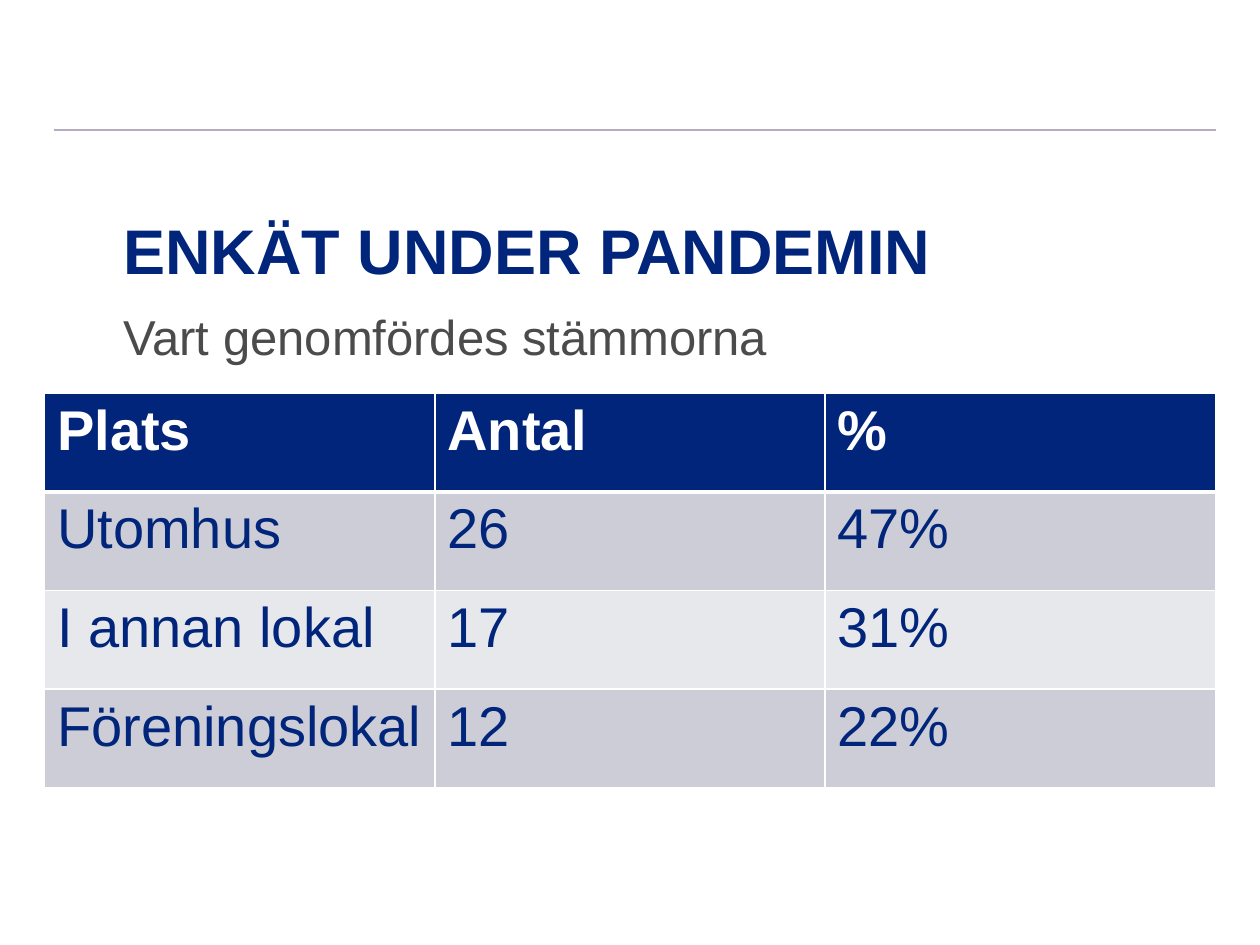
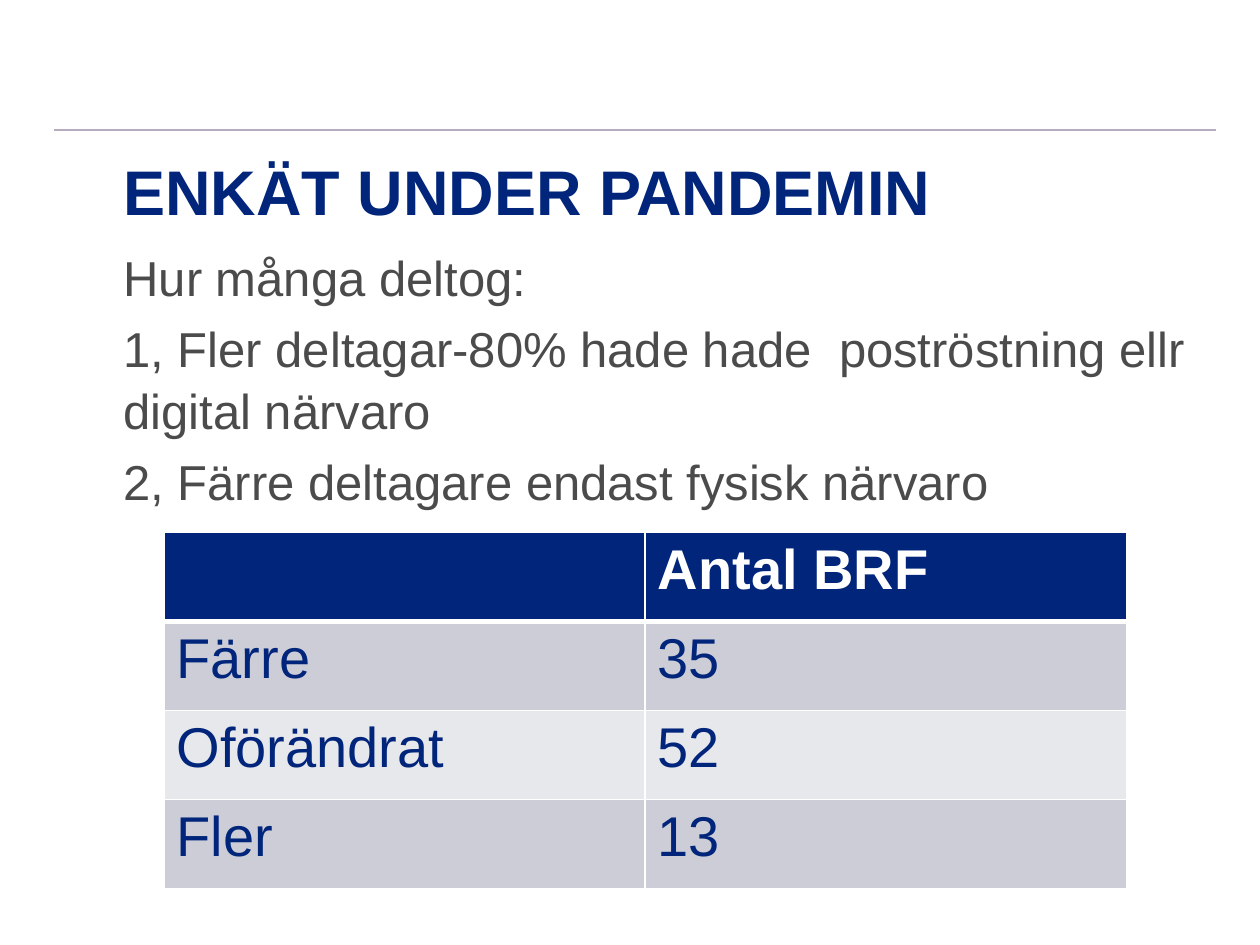
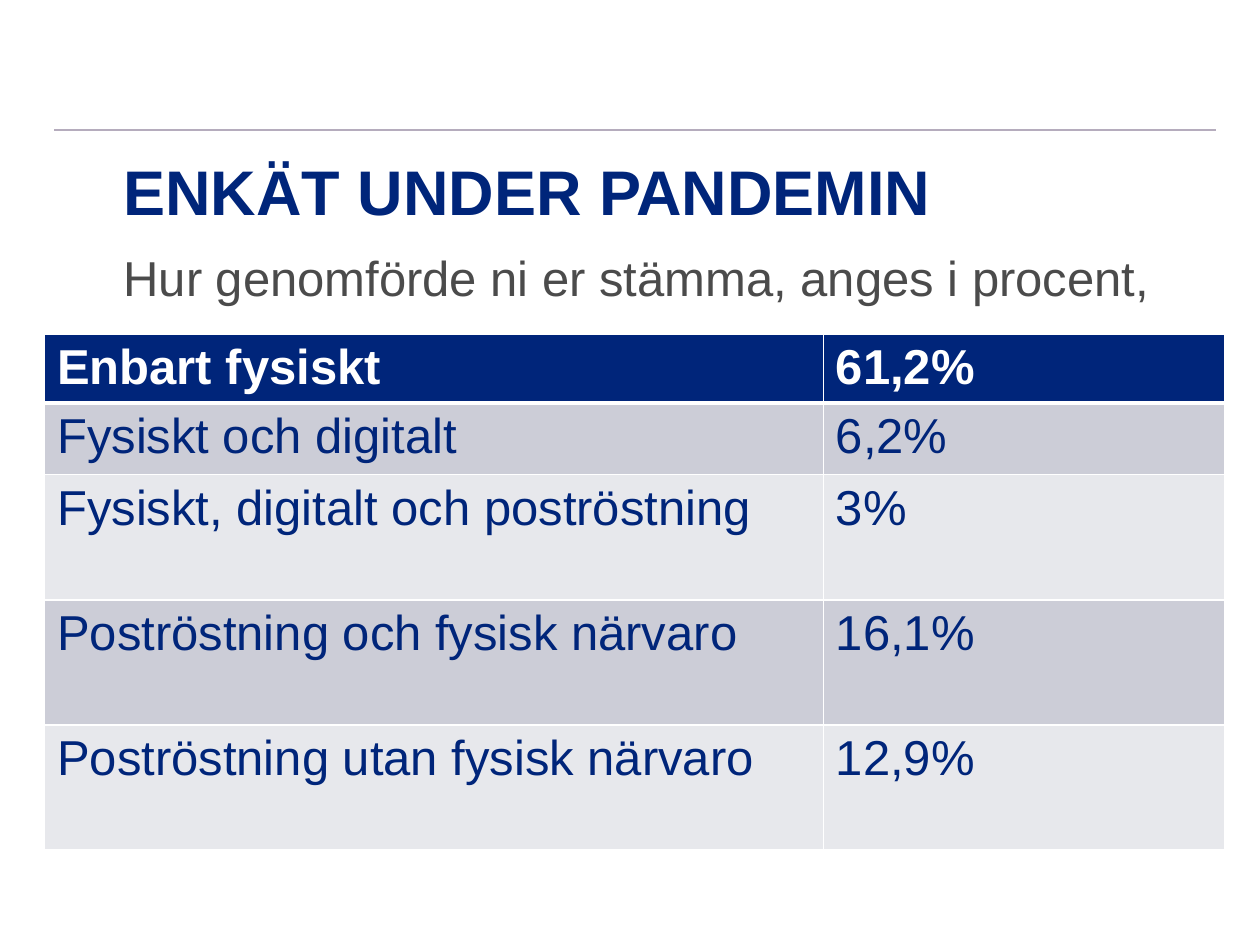
from dataclasses import dataclass

from pptx import Presentation
from pptx.dml.color import RGBColor
from pptx.enum.shapes import MSO_CONNECTOR as Connector
from pptx.enum.text import MSO_ANCHOR as Anchor, MSO_AUTO_SIZE as AutoSize, PP_ALIGN as Align
from pptx.oxml import parse_xml
from pptx.oxml.ns import nsdecls
from pptx.oxml.xmlchemy import OxmlElement
from pptx.util import Pt


@dataclass(frozen=True)
class Theme:
    font: str = "Arial"
    navy: str = "00257A"
    grey: str = "4B4B4B"
    white: str = "FFFFFF"
    rule: str = "B5ACBD"
    bands: tuple = ("CCCDD7", "E7E8EC")
    title_size: float = 36
    body_size: float = 28
    large_table_size: float = 32
    thin: float = 1
    thick: float = 3


THEME = Theme()
SLIDE_SIZE = (720, 540)
LEFT, RIGHT = 63.36, 694.8
RULE_LEFT, RULE_Y = 31, 74.2
TITLE_TOP, BODY_BOTTOM = 77, 507.6
HEADING = "ENKÄT UNDER PANDEMIN"


def place(shape, box):
    shape.left, shape.top, shape.width, shape.height = map(Pt, box)


def format_runs(paragraph, size, color, bold=False):
    for run in paragraph.runs:
        run.font.name = THEME.font
        run.font.size = Pt(size)
        run.font.bold = bold
        run.font.color.rgb = RGBColor.from_string(color)


def add_rule_to_layout(slide):
    """Draw the header rule once and hand it to the shared layout."""
    rule = slide.shapes.add_connector(
        Connector.STRAIGHT, Pt(RULE_LEFT), Pt(RULE_Y), Pt(RIGHT), Pt(RULE_Y))
    rule.line.color.rgb = RGBColor.from_string(THEME.rule)
    rule.line.width = Pt(1.5)
    rule.element.spPr.append(OxmlElement("a:effectLst"))
    slide.slide_layout.shapes.element.append(rule.element)


def fill_title(title, box):
    place(title, box)
    frame = title.text_frame
    frame.text = HEADING
    frame.auto_size = AutoSize.NONE
    frame.vertical_anchor = Anchor.BOTTOM
    heading = frame.paragraphs[0]
    heading.alignment = Align.LEFT
    format_runs(heading, THEME.title_size, THEME.navy, bold=True)


def fill_body(body, box, lines):
    place(body, box)
    frame = body.text_frame
    frame.text = "\n".join(lines)
    frame.auto_size = AutoSize.NONE
    frame.margin_top = Pt(6)
    for index, paragraph in enumerate(frame.paragraphs):
        properties = paragraph._p.get_or_add_pPr()
        properties.set("marL", "0")
        properties.set("indent", "0")
        properties.append(OxmlElement("a:buNone"))
        paragraph.line_spacing = 1.04
        paragraph.space_before = Pt(6 if index else 0)
        format_runs(paragraph, THEME.body_size, THEME.grey)


def set_borders(cell, top, bottom):
    widths = {"L": THEME.thin, "R": THEME.thin, "T": top, "B": bottom}
    properties = cell._tc.get_or_add_tcPr()
    for index, (side, width) in enumerate(widths.items()):
        properties.insert(index, parse_xml(
            f'<a:ln{side} {nsdecls("a")} w="{Pt(width)}"><a:solidFill>'
            f'<a:srgbClr val="{THEME.white}"/></a:solidFill></a:ln{side}>'))


def add_survey_table(slide, origin, widths, heights, answers, size):
    box = (*origin, sum(widths), sum(heights))
    table = slide.shapes.add_table(len(heights), len(widths), *map(Pt, box)).table
    table.horz_banding = False
    for column, width in zip(table.columns, widths):
        column.width = Pt(width)
    for index, (row, height, values) in enumerate(zip(table.rows, heights, answers)):
        row.height = Pt(height)
        header = index == 0
        fill = THEME.navy if header else THEME.bands[(index - 1) % 2]
        for cell, value in zip(row.cells, values):
            cell.text = value
            cell.fill.solid()
            cell.fill.fore_color.rgb = RGBColor.from_string(fill)
            format_runs(cell.text_frame.paragraphs[0], size,
                        THEME.white if header else THEME.navy, bold=header)
            set_borders(cell, top=THEME.thick if index == 1 else THEME.thin,
                        bottom=THEME.thick if header else THEME.thin)


def add_survey_slide(deck, body_top, lines, **table):
    slide = deck.slides.add_slide(deck.slide_layouts[1])
    title, body = slide.placeholders
    width = RIGHT - LEFT
    fill_title(title, (LEFT, TITLE_TOP, width, body_top - TITLE_TOP))
    fill_body(body, (LEFT, body_top, width, BODY_BOTTOM - body_top), lines)
    add_survey_table(slide, **table)
    return slide


def main():
    deck = Presentation()
    deck.slide_width, deck.slide_height = map(Pt, SLIDE_SIZE)

    # Where the meetings were held
    venues = add_survey_slide(
        deck, 167.8, ["Vart genomfördes stämmorna"],
        origin=(25.5, 224.8), widths=[223] * 3, heights=[56.3] * 4,
        size=THEME.large_table_size,
        answers=[("Plats", "Antal", "%"),
                 ("Utomhus", "26", "47%"),
                 ("I annan lokal", "17", "31%"),
                 ("Föreningslokal", "12", "22%")])
    add_rule_to_layout(venues)

    # How many took part
    add_survey_slide(
        deck, 133.9,
        ["Hur många deltog:",
         "1, Fler deltagar-80% hade hade  poströstning ellr digital närvaro",
         "2, Färre deltagare endast fysisk närvaro"],
        origin=(93.7, 304.2), widths=[275] * 2, heights=[50.9] * 4,
        size=THEME.large_table_size,
        answers=[("", "Antal BRF"),
                 ("Färre", "35"),
                 ("Oförändrat", "52"),
                 ("Fler", "13")])

    # How the meetings were held
    add_survey_slide(
        deck, 133.9, ["Hur genomförde ni er stämma, anges i procent,"],
        origin=(25.5, 190.8), widths=[445, 229.6], heights=[39.5, 41] + [71.5] * 3,
        size=THEME.body_size,
        answers=[("Enbart fysiskt", "61,2%"),
                 ("Fysiskt och digitalt", "6,2%"),
                 ("Fysiskt, digitalt och poströstning", "3%"),
                 ("Poströstning och fysisk närvaro", "16,1%"),
                 ("Poströstning utan fysisk närvaro", "12,9%")])

    deck.save("out.pptx")


if __name__ == "__main__":
    main()
